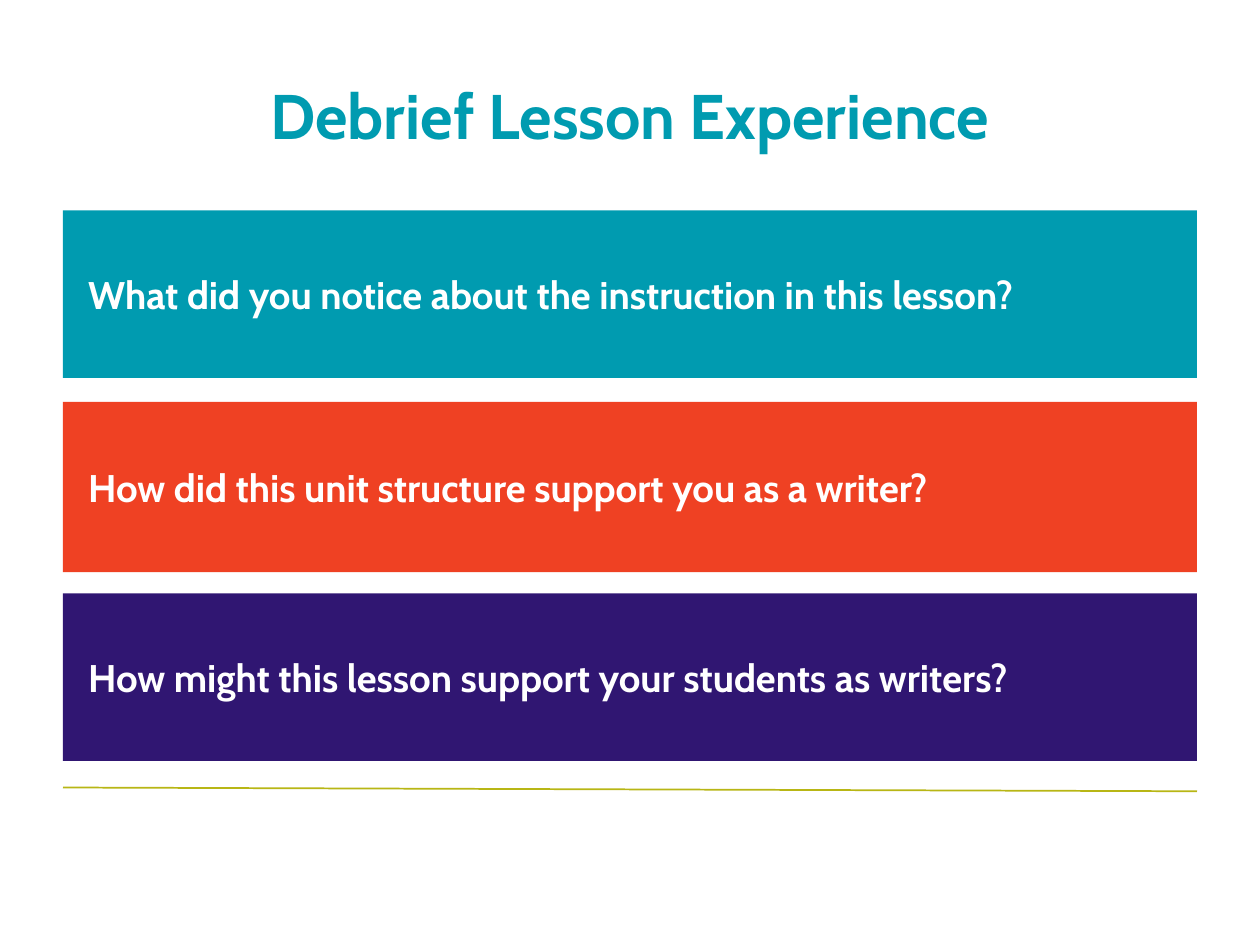
"""Build the lesson debrief slide with three question bands."""
from lxml.etree import SubElement
from pptx import Presentation
from pptx.dml.color import RGBColor
from pptx.enum.shapes import MSO_CONNECTOR, MSO_SHAPE
from pptx.enum.text import MSO_ANCHOR, PP_ALIGN
from pptx.oxml.ns import qn
from pptx.util import Inches, Pt

COLORS = {
    "teal": "009BB0",
    "orange": "EF4123",
    "purple": "301672",
    "olive": "B8B615",
    "white": "FFFFFF",
}
QUESTIONS = [
    ("What did you notice about the instruction in this lesson?", "teal", 1.33),
    ("How did this unit structure support you as a writer?", "orange", 1.35),
    ("How might this lesson support your students as writers?", "purple", 1.33),
]
LEFT, WIDTH = Inches(0.5), Inches(9)
FIRST_TOP, PITCH = 1.67, 1.52


def write_text(shape, text, size, color, alignment):
    shape.text_frame.text = text
    shape.text_frame.word_wrap = True
    shape.text_frame.vertical_anchor = MSO_ANCHOR.MIDDLE
    paragraph = shape.text_frame.paragraphs[0]
    paragraph.alignment = alignment
    paragraph.font.name = "Cabin"
    paragraph.font.size = Pt(size)
    paragraph.font.bold = True
    paragraph.font.color.rgb = RGBColor.from_string(COLORS[color])


presentation = Presentation()
presentation.slide_width = Inches(10)
presentation.slide_height = Inches(7.5)
slide = presentation.slides.add_slide(presentation.slide_layouts[5])

rule = slide.shapes.add_connector(
    MSO_CONNECTOR.STRAIGHT, LEFT, Inches(6.25), LEFT + WIDTH, Inches(6.28)
)
rule.line.color.rgb = RGBColor.from_string(COLORS["olive"])
rule.line.width = Pt(1)
SubElement(rule.element.spPr, qn("a:effectLst"))

title = slide.shapes.title
title.left, title.top = LEFT, Inches(0.34)
title.width, title.height = WIDTH, Inches(1.14)
write_text(title, "Debrief Lesson Experience", 36, "teal", PP_ALIGN.CENTER)

for index, (question, color, height) in enumerate(QUESTIONS):
    band = slide.shapes.add_shape(
        MSO_SHAPE.RECTANGLE, LEFT, Inches(FIRST_TOP + index * PITCH), WIDTH, Inches(height)
    )
    band.shadow.inherit = False
    band.fill.solid()
    band.fill.fore_color.rgb = RGBColor.from_string(COLORS[color])
    band.line.fill.background()
    frame = band.text_frame
    frame.margin_left = frame.margin_right = Inches(0.2)
    frame.margin_top = frame.margin_bottom = Inches(0.2)
    write_text(band, question, 22, "white", PP_ALIGN.LEFT)

presentation.save("out.pptx")
